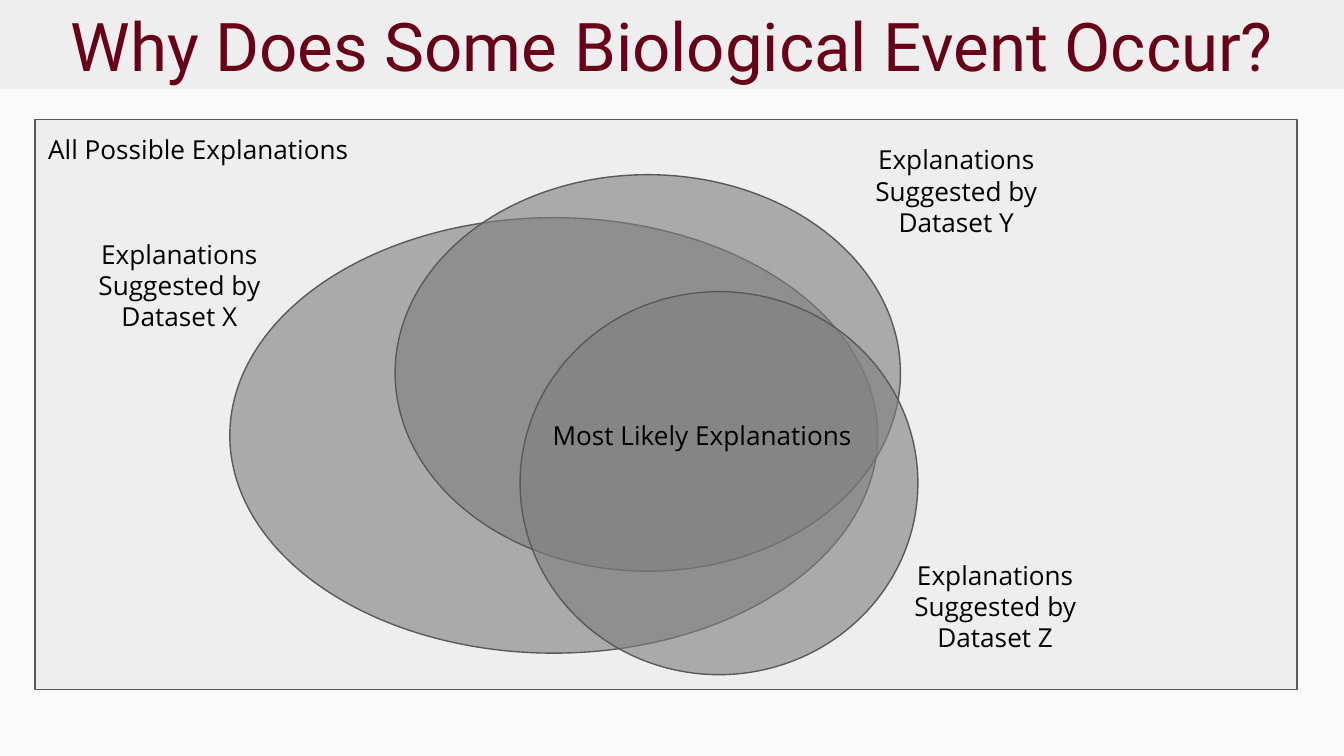
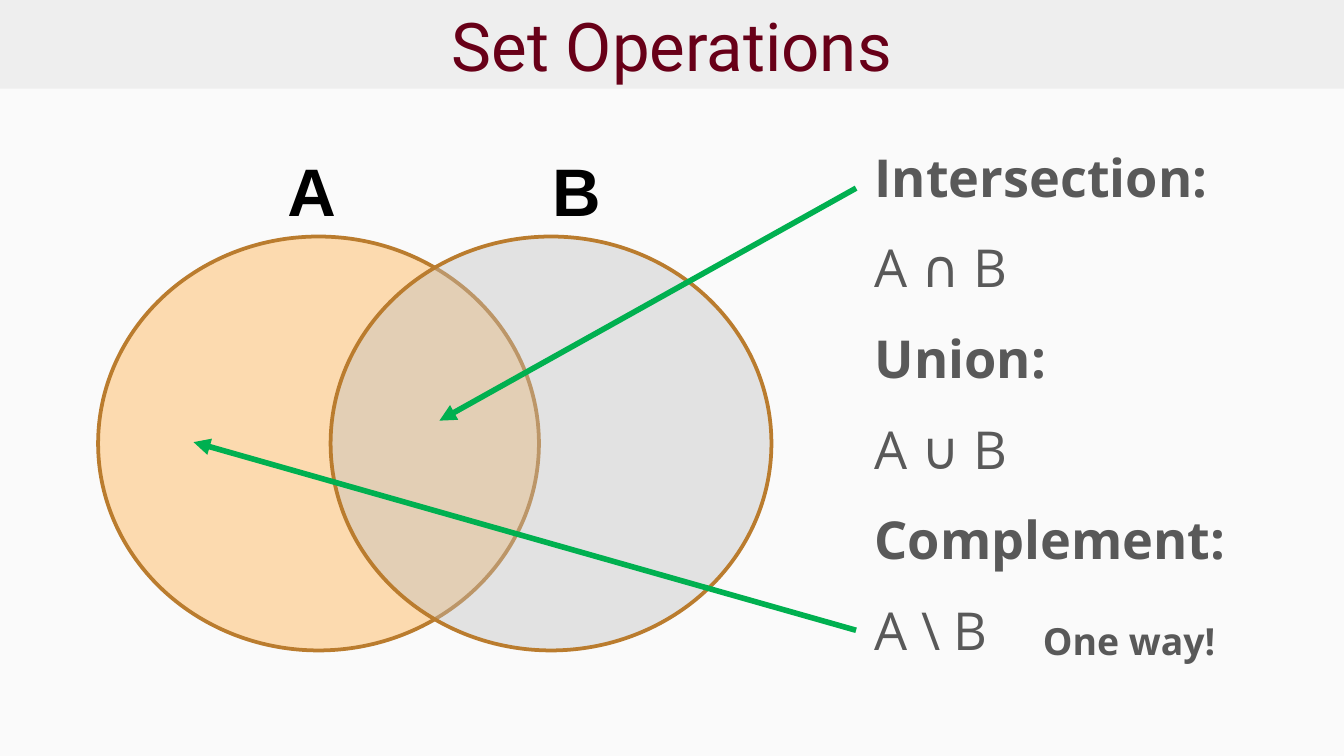
from lxml import etree
from pptx import Presentation
from pptx.dml.color import RGBColor
from pptx.enum.shapes import MSO_CONNECTOR, MSO_SHAPE
from pptx.enum.text import MSO_ANCHOR, MSO_AUTO_SIZE, PP_ALIGN
from pptx.oxml.ns import qn
from pptx.util import Inches, Pt

RECTANGLE, ELLIPSE = MSO_SHAPE.RECTANGLE, MSO_SHAPE.OVAL
STRAIGHT = MSO_CONNECTOR.STRAIGHT
LEFT, CENTER = PP_ALIGN.LEFT, PP_ALIGN.CENTER
TOP, MIDDLE = MSO_ANCHOR.TOP, MSO_ANCHOR.MIDDLE
SHRINK = MSO_AUTO_SIZE.TEXT_TO_FIT_SHAPE

BACKGROUND = RGBColor(0xFA, 0xFA, 0xFA)
PANEL = RGBColor(0xEE, 0xEE, 0xEE)
MAROON = RGBColor(0x68, 0x00, 0x18)
BLACK = RGBColor(0x00, 0x00, 0x00)
DARK_GRAY = RGBColor(0x59, 0x59, 0x59)
MID_GRAY = RGBColor(0x7F, 0x7F, 0x7F)
LIGHT_GRAY = RGBColor(0xBF, 0xBF, 0xBF)
ORANGE = RGBColor(0xFF, 0xAB, 0x40)
BROWN = RGBColor(0xBA, 0x7C, 0x2E)
GREEN = RGBColor(0x00, 0xB0, 0x50)

WIDTH = 10
HEIGHT = WIDTH * 9 / 16
BAND_HEIGHT = 0.66
TITLE_FONT, BODY_FONT, LETTER_FONT = "Roboto", "Open Sans", "Arial"

# Slide 1: boxes are left, top, width, height in inches
EXPLANATIONS_TITLE = "Why Does Some Biological Event Occur?"
ALL_EXPLANATIONS = (0.26, 0.89, 9.39, 4.24)
DATASETS = [  # name, ellipse, label box
    ("X", (1.71, 1.62, 4.82, 3.24), (0.56, 1.67, 1.55, 0.89)),
    ("Y", (2.94, 1.3, 3.76, 2.95), (6.24, 0.97, 1.75, 0.96)),
    ("Z", (3.87, 2.17, 2.96, 2.85), (6.53, 4.06, 1.75, 0.96)),
]
REGION_LABELS = [
    ("All Possible Explanations", (0.26, 0.89, 2.61, 0.41), LEFT),
    ("Most Likely Explanations", (3.92, 3.02, 2.61, 0.46), CENTER),
]

# Slide 2
OPERATIONS_TITLE = "Set Operations"
SET_TOP, SET_WIDTH, SET_HEIGHT = 1.76, 3.28, 3.08
SETS = [  # letter, circle left, letter left, fill
    ("A", 0.73, 2.04, ORANGE),
    ("B", 2.46, 4.01, LIGHT_GRAY),
]
OPERATIONS = [
    ("Intersection:", "A ∩ B"),
    ("Union:", "A ∪ B"),
    ("Complement:", r"A \ B"),
]
OPERATIONS_BOX = (6.37, 0.91, 3.2, 4.29)
REMARK, REMARK_BOX = "One way!", (7.62, 4.45, 1.68, 0.68)
ARROWS = [((6.37, 1.4), (3.27, 3.13)), ((6.37, 4.69), (1.44, 3.29))]
LIST_FORMAT = {"color": DARK_GRAY, "indent": 0.04, "line_spacing": 1.15, "space_before": 10}


def inches(values):
    return [Inches(value) for value in values]


def write_text(shape, paragraphs, size=14, font=BODY_FONT, color=BLACK, align=LEFT,
               anchor=TOP, padding=0.1, indent=0, line_spacing=None, space_before=None):
    """Fill a shape with paragraphs given as (text, bold) pairs."""
    frame = shape.text_frame
    frame.word_wrap = True
    frame.vertical_anchor = anchor
    frame.margin_left = frame.margin_right = Inches(0.1)
    frame.margin_top = frame.margin_bottom = Inches(padding)
    for index, (text, bold) in enumerate(paragraphs):
        paragraph = frame.add_paragraph() if index else frame.paragraphs[0]
        paragraph.alignment = align
        if line_spacing:
            paragraph.line_spacing = line_spacing
        if space_before:
            paragraph.space_before = Pt(space_before)
        if indent:
            properties = paragraph._p.get_or_add_pPr()
            properties.set("marL", str(Inches(indent)))
            properties.set("indent", "0")
        run = paragraph.add_run()
        run.text = text
        run.font.size = Pt(size)
        run.font.name = font
        run.font.bold = bold
        run.font.color.rgb = color


def add_text(slide, box, paragraphs, **text_format):
    shape = slide.shapes.add_textbox(*inches(box))
    write_text(shape, paragraphs, **text_format)
    return shape


def add_figure(slide, kind, box, fill, line=None, line_width=0.75, opacity=None):
    shape = slide.shapes.add_shape(kind, *inches(box))
    shape.shadow.inherit = False
    shape.fill.solid()
    shape.fill.fore_color.rgb = fill
    if opacity:
        color = shape._element.spPr.find(qn("a:solidFill"))[0]
        etree.SubElement(color, qn("a:alpha")).set("val", str(opacity * 1000))
    if line is None:
        shape.line.fill.background()
    else:
        shape.line.color.rgb = line
        shape.line.width = Pt(line_width)
    return shape


def add_arrow(slide, start, end):
    arrow = slide.shapes.add_connector(STRAIGHT, *inches(start + end))
    arrow.line.color.rgb = GREEN
    arrow.line.width = Pt(3)
    etree.SubElement(arrow.line._get_or_add_ln(), qn("a:tailEnd")).set("type", "triangle")
    etree.SubElement(arrow._element.spPr, qn("a:effectLst"))


def add_titled_slide(presentation, title):
    slide = presentation.slides.add_slide(presentation.slide_layouts[6])
    slide.background.fill.solid()
    slide.background.fill.fore_color.rgb = BACKGROUND
    band = add_figure(slide, RECTANGLE, (0, 0, WIDTH, BAND_HEIGHT), PANEL)
    write_text(band, [(title, False)], size=36, font=TITLE_FONT, color=MAROON,
               align=CENTER, anchor=MIDDLE)
    return slide


def build_explanations(presentation):
    slide = add_titled_slide(presentation, EXPLANATIONS_TITLE)
    add_figure(slide, RECTANGLE, ALL_EXPLANATIONS, PANEL, line=DARK_GRAY)
    for name, ellipse, label_box in DATASETS:
        add_figure(slide, ELLIPSE, ellipse, MID_GRAY, line=DARK_GRAY, opacity=61)
        label = f"Explanations Suggested by Dataset {name}"
        add_text(slide, label_box, [(label, False)], align=CENTER)
    for label, box, align in REGION_LABELS:
        add_text(slide, box, [(label, False)], align=align)


def build_operations(presentation):
    slide = add_titled_slide(presentation, OPERATIONS_TITLE)
    for letter, left, letter_left, fill in SETS:
        add_figure(slide, ELLIPSE, (left, SET_TOP, SET_WIDTH, SET_HEIGHT), fill,
                   line=BROWN, line_width=2, opacity=40)
        add_text(slide, (letter_left, 1.06, 0.48, 0.71), [(letter, True)],
                 size=36, font=LETTER_FONT, padding=0.05)
    lines = [(text, bold) for name, formula in OPERATIONS
             for text, bold in ((name, True), (formula, False))]
    operations = add_text(slide, OPERATIONS_BOX, lines, size=28, **LIST_FORMAT)
    operations.text_frame.auto_size = SHRINK
    for start, end in ARROWS:
        add_arrow(slide, start, end)
    add_text(slide, REMARK_BOX, [(REMARK, True)], size=20, **LIST_FORMAT)


def main():
    presentation = Presentation()
    presentation.slide_width = Inches(WIDTH)
    presentation.slide_height = Inches(HEIGHT)
    build_explanations(presentation)
    build_operations(presentation)
    presentation.save("out.pptx")


if __name__ == "__main__":
    main()
